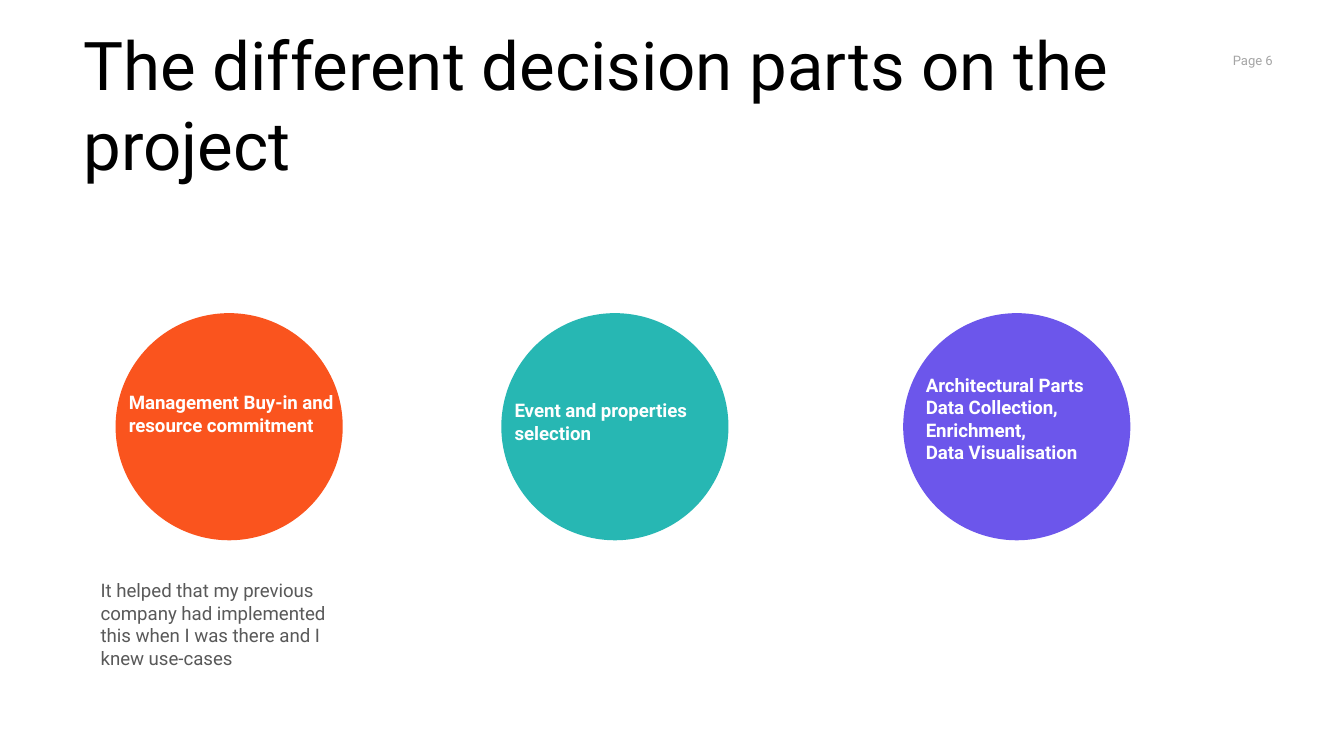
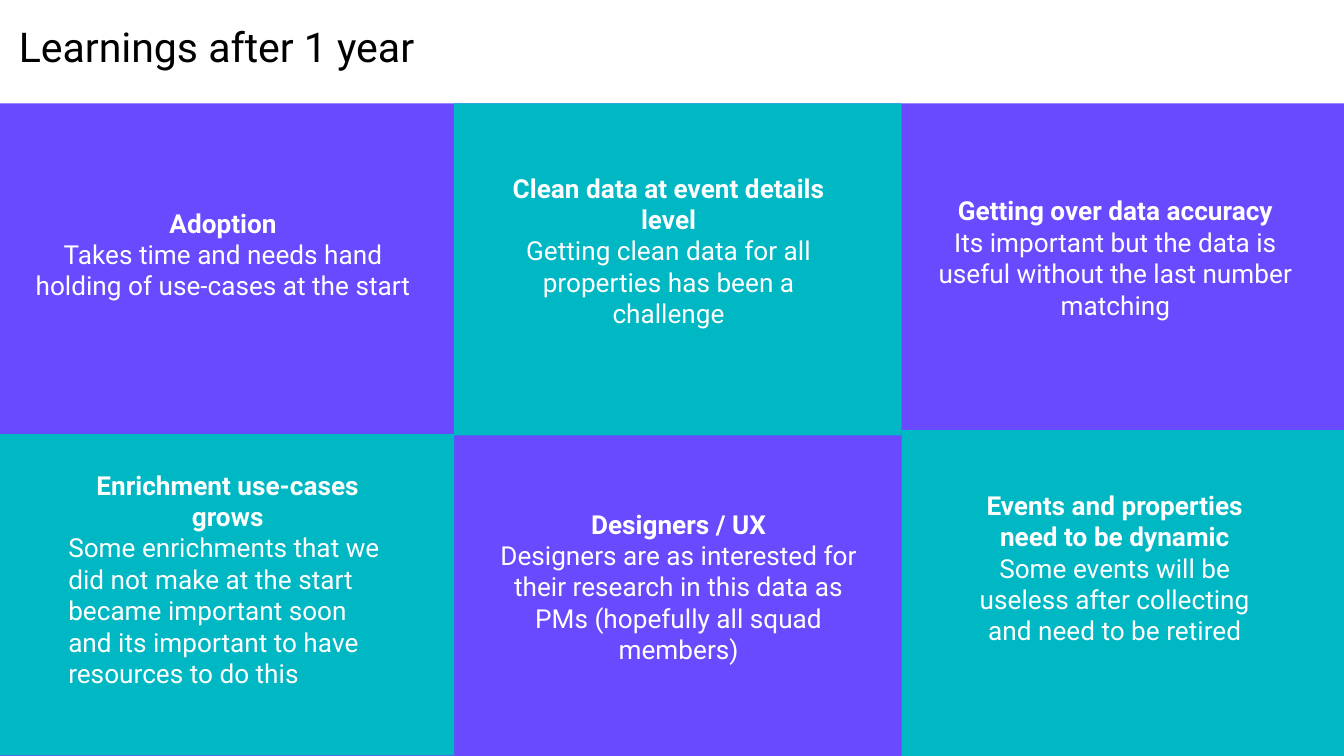
"""Build two slides: project decision parts and learnings after one year."""
import pptx
import pptx.util
import pptx.dml.color
import pptx.enum.shapes
import pptx.enum.text

Inches = pptx.util.Inches
Pt = pptx.util.Pt
RGBColor = pptx.dml.color.RGBColor
Shape = pptx.enum.shapes.MSO_SHAPE
Anchor = pptx.enum.text.MSO_ANCHOR
Align = pptx.enum.text.PP_ALIGN

FONT = "Roboto"
BLACK = RGBColor(0x00, 0x00, 0x00)
WHITE = RGBColor(0xFF, 0xFF, 0xFF)
GREY = RGBColor(0x59, 0x59, 0x59)
PALE = RGBColor(0xA5, 0xA5, 0xA5)
ORANGE = RGBColor(0xFA, 0x54, 0x1E)
GREEN = RGBColor(0x27, 0xB7, 0xB3)
PURPLE = RGBColor(0x6C, 0x56, 0xEB)
VIOLET = RGBColor(0x69, 0x4A, 0xFF)
TEAL = RGBColor(0x00, 0xB7, 0xC4)


def write(box, place, lines, size, color, inset=0.1, anchor=Anchor.TOP):
    """Place a box and fill it with (text, bold, alignment) lines."""
    box.left, box.top, box.width, box.height = map(Inches, place)
    frame = box.text_frame
    frame.word_wrap = True
    frame.auto_size = pptx.enum.text.MSO_AUTO_SIZE.NONE
    frame.vertical_anchor = anchor
    frame.margin_left = frame.margin_right = Inches(inset)
    frame.margin_top = frame.margin_bottom = Inches(inset)
    frame.text = "\n".join(text for text, bold, align in lines)
    for para, (text, bold, align) in zip(frame.paragraphs, lines):
        para.alignment = align
        para.font.name = FONT
        para.font.size = Pt(size)
        para.font.bold = bold
        para.font.color.rgb = color


def paint(slide, kind, place, color):
    """Draw a plain filled shape."""
    shape = slide.shapes.add_shape(kind, *map(Inches, place))
    shape.shadow.inherit = False
    shape.fill.solid()
    shape.fill.fore_color.rgb = color
    shape.line.fill.background()


deck = pptx.Presentation()
deck.slide_width = Inches(10)
deck.slide_height = Inches(10 * 9 / 16)

titles = [
    ("The different decision parts on the project", (0.62, 0.17, 8.55, 0.72), 36),
    ("Learnings after 1 year", (0.14, 0.16, 9.9, 0.61), 22),
]
slides = []
for text, place, size in titles:
    slide = deck.slides.add_slide(deck.slide_layouts[5])
    write(slide.shapes.title, place, [(text, False, Align.LEFT)], size, BLACK, 0)
    slides.append(slide)
parts, learned = slides

page = parts.shapes.add_textbox(0, 0, 0, 0)
write(page, (8.63, 0.3, 0.84, 0.3), [("Page 6", False, Align.RIGHT)], 7, PALE, 0, Anchor.MIDDLE)

circles = [
    (0.86, ORANGE, (0.86, 2.81, 1.81, 0.84), ["Management Buy-in and resource commitment"]),
    (3.73, GREEN, (3.73, 2.87, 1.81, 0.6), ["Event and properties selection"]),
    (6.72, PURPLE, (6.79, 2.68, 1.9, 0.99),
     ["Architectural Parts", "Data Collection, Enrichment,", "Data Visualisation"]),
]
for left, color, place, lines in circles:
    paint(parts, Shape.OVAL, (left, 2.33, 1.69, 1.69), color)
    label = parts.shapes.add_textbox(0, 0, 0, 0)
    write(label, place, [(line, True, Align.LEFT) for line in lines], 10, WHITE)

note = parts.shapes.add_textbox(0, 0, 0, 0)
write(note, (0.65, 4.21, 2.12, 1.12),
      [("It helped that my previous company had implemented this when I was there and I knew use-cases",
        False, Align.LEFT)], 10, GREY)

paint(learned, Shape.RECTANGLE, (0, 0.77, 10, 4.86), VIOLET)
for tile in [(0, 3.23, 3.38, 2.39), (3.38, 0.77, 3.33, 2.47), (6.71, 3.2, 3.33, 2.47)]:
    paint(learned, Shape.RECTANGLE, tile, TEAL)

lessons = [
    (0.14, 1.44, 3.04, Align.CENTER, "Adoption",
     "Takes time and needs hand holding of use-cases at the start"),
    (3.69, 1.18, 2.57, Align.CENTER, "Clean data at event details level",
     "Getting clean data for all properties has been a challenge"),
    (6.78, 1.35, 3.04, Align.CENTER, "Getting over data accuracy",
     "Its important but the data is useful without the last number matching"),
    (0.41, 3.39, 2.57, Align.LEFT, "Enrichment use-cases grows",
     "Some enrichments that we did not make at the start became important soon "
     "and its important to have resources to do this"),
    (3.53, 3.68, 3.04, Align.CENTER, "Designers / UX",
     "Designers are as interested for their research in this data as PMs "
     "(hopefully all squad members)"),
    (7.01, 3.54, 2.57, Align.CENTER, "Events and properties need to be dynamic",
     "Some events will be useless after collecting and need to be retired"),
]
for left, top, width, align, head, body in lessons:
    lesson = learned.shapes.add_textbox(0, 0, 0, 0)
    write(lesson, (left, top, width, 1.5),
          [(head, True, Align.CENTER), (body, False, align)], 14, WHITE)

deck.save("out.pptx")
